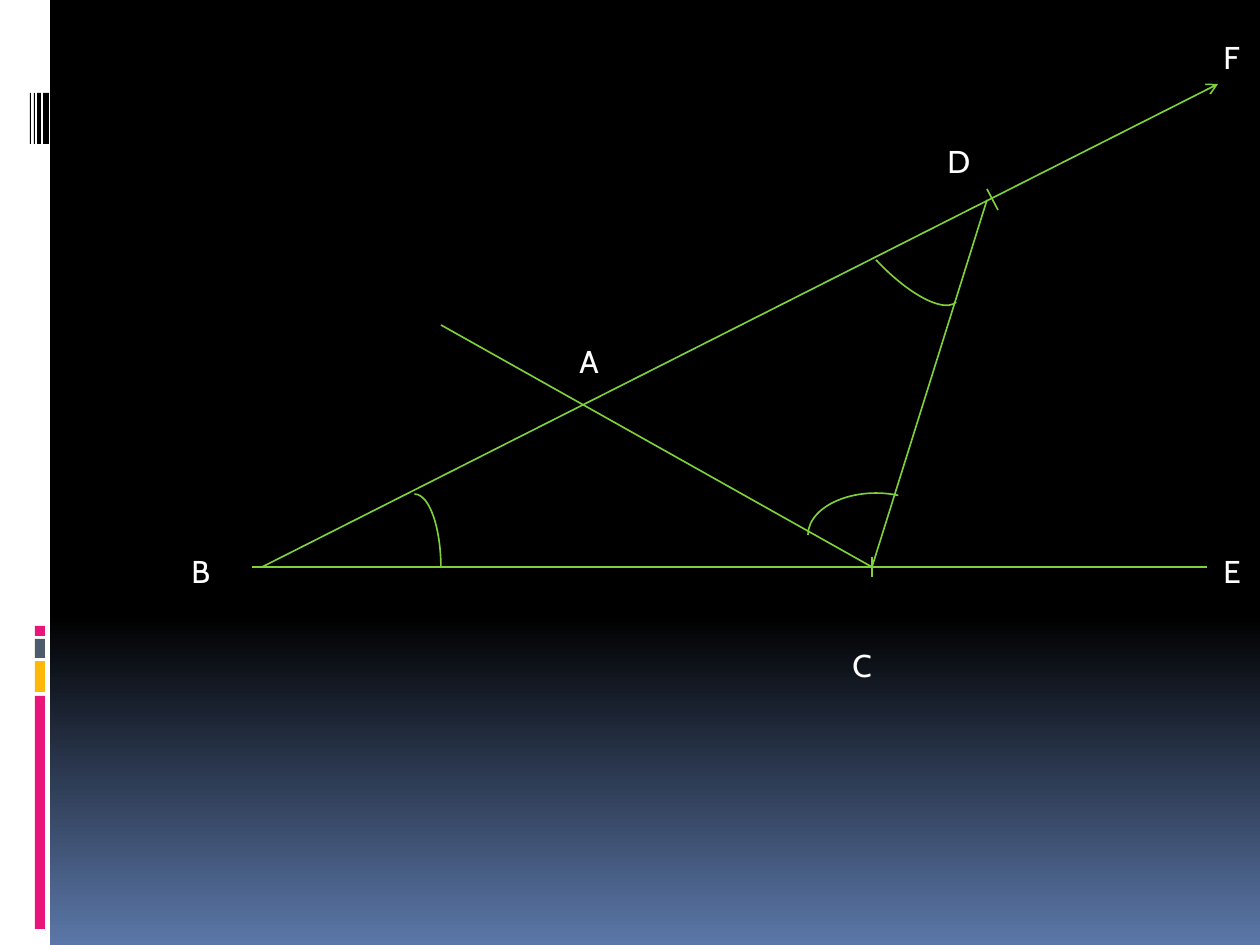
from copy import deepcopy

from lxml import etree
from pptx import Presentation
from pptx.dml.color import RGBColor
from pptx.enum.shapes import MSO_CONNECTOR, MSO_SHAPE
from pptx.oxml.ns import qn
from pptx.util import Emu, Pt

RECT, ARC = MSO_SHAPE.RECTANGLE, MSO_SHAPE.ARC
STRAIGHT = MSO_CONNECTOR.STRAIGHT
GREEN, WHITE, BLACK, PINK = "7FD13B", "FFFFFF", "000000", "EA157A"
LINE_WIDTH = Pt(0.94)
LABEL_FONT = {"name": "Cabin", "size": Pt(18)}


def px(n):
    return Emu(round(n * 914400 / 126))


def color(value):
    return RGBColor.from_string(value)


def set_line(line):
    line.color.rgb = color(GREEN)
    line.width = LINE_WIDTH


def add_background(s):
    fill = s.background.fill
    fill.gradient()
    fill.gradient_angle = 270
    stop_list = s._element.xpath(".//a:gsLst")[0]
    stop_list.insert(1, deepcopy(stop_list[0]))
    stops = [(0, BLACK), (0.65, BLACK), (1, "5B77A8")]
    for stop, (position, value) in zip(fill.gradient_stops, stops):
        stop.position = position
        stop.color.rgb = color(value)


def add_bar(s, x, y, w, h, fill):
    sp = s.shapes.add_shape(RECT, px(x), px(y), px(w), px(h))
    sp.shadow.inherit = False
    sp.fill.solid()
    sp.fill.fore_color.rgb = color(fill)
    sp.line.fill.background()


def add_line(s, start, end, arrow=False):
    sp = s.shapes.add_connector(STRAIGHT, *map(px, start + end))
    set_line(sp.line)
    props = sp._element.spPr
    if arrow:
        etree.SubElement(sp.line._get_or_add_ln(), qn("a:tailEnd"), type="arrow")
    etree.SubElement(props, qn("a:effectLst"))


def add_arc(s, x, y, w, h, rotation=0, adjustments=()):
    sp = s.shapes.add_shape(ARC, px(x), px(y), px(w), px(h))
    sp.shadow.inherit = False
    sp.fill.background()
    sp.rotation = rotation
    for i, value in enumerate(adjustments):
        sp.adjustments[i] = value
    set_line(sp.line)


def add_label(s, text, x, y):
    tf = s.shapes.add_textbox(px(x), px(y), px(50), px(51)).text_frame
    tf.word_wrap = True
    r = tf.paragraphs[0].add_run()
    r.text = text
    for name, value in LABEL_FONT.items():
        setattr(r.font, name, value)
    r.font.color.rgb = color(WHITE)


def main():
    prs = Presentation()
    prs.slide_width, prs.slide_height = px(1260), px(945)
    s = prs.slides.add_slide(prs.slide_layouts[6])
    add_background(s)

    # Side strip with coloured blocks and black stripes
    add_bar(s, 0, 0, 50, 945, WHITE)
    for y, h, fill in [(696, 233, PINK), (661, 31, "FEB80A"),
                       (639, 19, "4E5B6F"), (626, 10, PINK)]:
        add_bar(s, 35, y, 10, h, fill)
    for x, w in [(43, 6), (37, 4), (34, 1), (30, 1)]:
        add_bar(s, x, 93, w, 51, BLACK)

    # Rays from B, and the two segments from C
    c, d = (872, 567), (987, 200)
    add_line(s, (252, 567), (1207, 567))
    add_line(s, (262, 567), (1218, 84), arrow=True)
    add_line(s, d, c)
    add_line(s, c, (441, 325))

    # Ticks at C and D
    add_line(s, (872, 577), (872, 557))
    add_line(s, (987, 189), (998, 210))

    # Angle marks at B, D and C
    add_arc(s, 388, 494, 53, 147)
    add_arc(s, 868, 154, 60, 171, rotation=137.1)
    add_arc(s, 834, 467, 84, 136, rotation=270, adjustments=(162, 17.69))

    # Point names
    for text, x, y in [("A", 567, 336), ("B", 179, 546), ("C", 840, 640),
                       ("D", 935, 136), ("E", 1211, 546), ("F", 1211, 32)]:
        add_label(s, text, x, y)

    prs.save("out.pptx")


if __name__ == "__main__":
    main()
